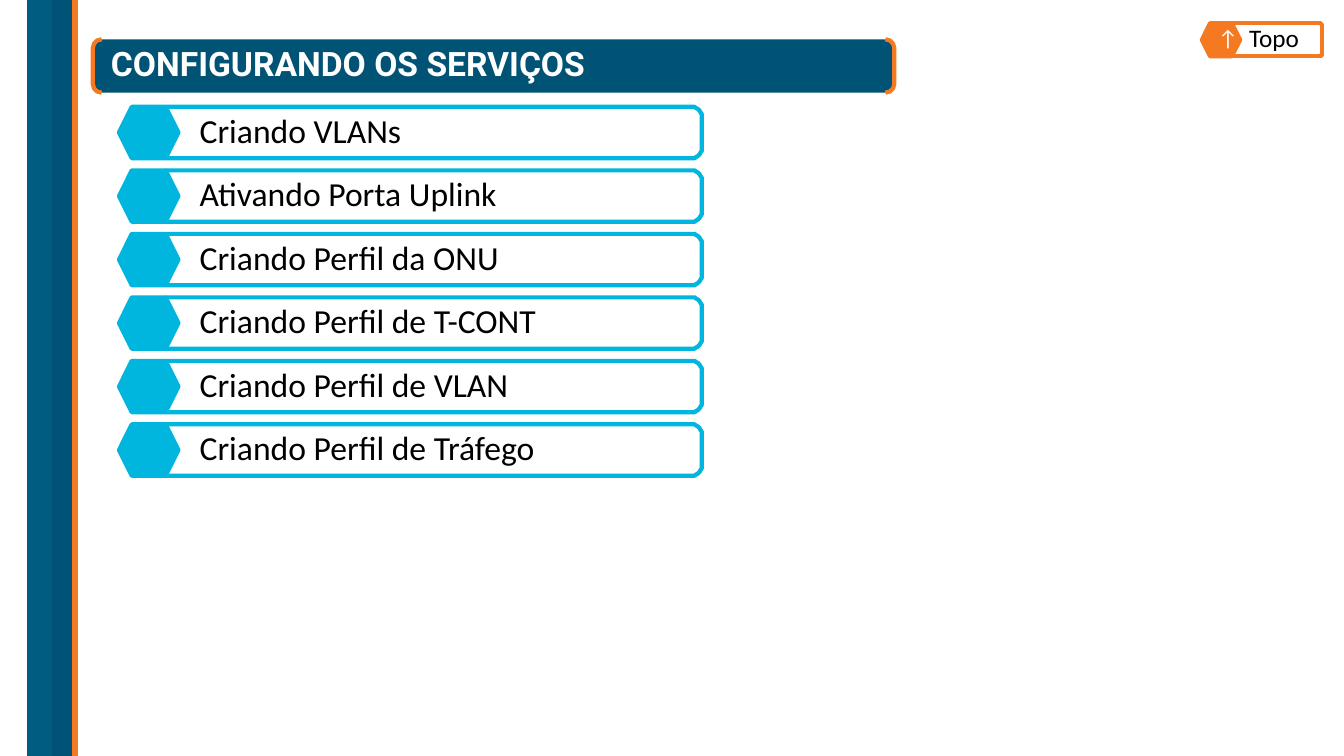
from math import cos, pi, sin

from pptx import Presentation
from pptx.dml.color import RGBColor
from pptx.enum.shapes import MSO_SHAPE as SHAPE
from pptx.enum.text import MSO_ANCHOR as ANCHOR, PP_ALIGN as ALIGN
from pptx.util import Pt

PX = 9144  # 100 px to the inch
CYAN, ORANGE, NAVY, WHITE, BLACK = "00B5DE", "F47920", "005374", "FFFFFF", "000000"
SERVICES = ["Criando VLANs", "Ativando Porta Uplink", "Criando Perfil da ONU",
            "Criando Perfil de T-CONT", "Criando Perfil de VLAN",
            "Criando Perfil de Tráfego"]


def rgb(color):
    return RGBColor.from_string(color)


def paint(sp, fill, line, width):
    sp.shadow.inherit = False
    sp.fill.solid()
    sp.fill.fore_color.rgb = rgb(fill)
    sp.line.color.rgb = rgb(line)
    sp.line.width = Pt(width)


def add_preset(s, kind, box, fill, line, width):
    sp = s.shapes.add_shape(kind, *(v * PX for v in box))
    paint(sp, fill, line, width)
    return sp


def write(sp, text, size, color, font="Calibri", bold=False, align=ALIGN.LEFT,
          insets=(10, 5, 10, 5), wrap=True):
    tf = sp.text_frame
    tf.margin_left, tf.margin_top, tf.margin_right, tf.margin_bottom = (
        v * PX for v in insets)
    tf.vertical_anchor = ANCHOR.MIDDLE
    tf.word_wrap = wrap
    p = tf.paragraphs[0]
    p.text = text
    p.alignment = align
    p.line_spacing = 0.9
    p.space_before = Pt(0)
    p.font.name, p.font.size, p.font.bold = font, Pt(size), bold
    p.font.color.rgb = rgb(color)


def add_bar(s, x, y, w, h, radius, color):
    """Box with square left corners and rounded right corners."""
    right, bottom = x + w - radius, y + h - radius
    angles = [i * pi / 16 for i in range(9)]
    points = [(right + radius * sin(a), y + radius - radius * cos(a)) for a in angles]
    points += [(right + radius * cos(a), bottom + radius * sin(a)) for a in angles]
    builder = s.shapes.build_freeform(x, y, scale=PX)
    builder.add_line_segments(points + [(x, y + h)], close=True)
    sp = builder.convert_to_shape()
    paint(sp, WHITE, color, 3)
    return sp


def add_button(s, text, bar, hexagon, radius, color, size):
    sp = add_bar(s, *bar, radius, color)
    write(sp, text, size, BLACK, insets=(33, 7, 7, 7))
    return add_preset(s, SHAPE.HEXAGON, hexagon, color, color, 3)


def add_title(s, text):
    add_preset(s, SHAPE.DOUBLE_BRACKET, (92, 39, 795, 53), NAVY, ORANGE, 3)
    title = s.shapes.title
    title.left, title.top, title.width, title.height = (
        v * PX for v in (100, 39, 787, 53))
    write(title, text, 24, WHITE, font="Roboto", bold=True)
    title.element.getparent().append(title.element)  # in front of the bracket


def main():
    prs = Presentation()
    prs.slide_width, prs.slide_height = 1333 * PX, 750 * PX
    s = prs.slides.add_slide(prs.slide_layouts[5])

    for x, w, fill, line in [(27, 45, "005C80", "005D7E"),
                             (52, 20, "005276", "005274"),
                             (72, 5, ORANGE, ORANGE)]:
        add_preset(s, SHAPE.RECTANGLE, (x, 0, w, 750), fill, line, 1)
    add_title(s, "CONFIGURANDO OS SERVIÇOS")

    for i, service in enumerate(SERVICES):
        y = 106 + 63 * i
        add_button(s, service, (165, y, 531, 51), (118, y, 59, 51), 9, CYAN, 24)

    arrow = add_button(s, "Topo", (1206, 23, 105, 33), (1192, 23, 38, 33), 2, ORANGE, 18)
    write(arrow, "↑", 16, WHITE, align=ALIGN.CENTER, insets=(14, 0, 0, 0), wrap=False)
    prs.save("out.pptx")


if __name__ == "__main__":
    main()
